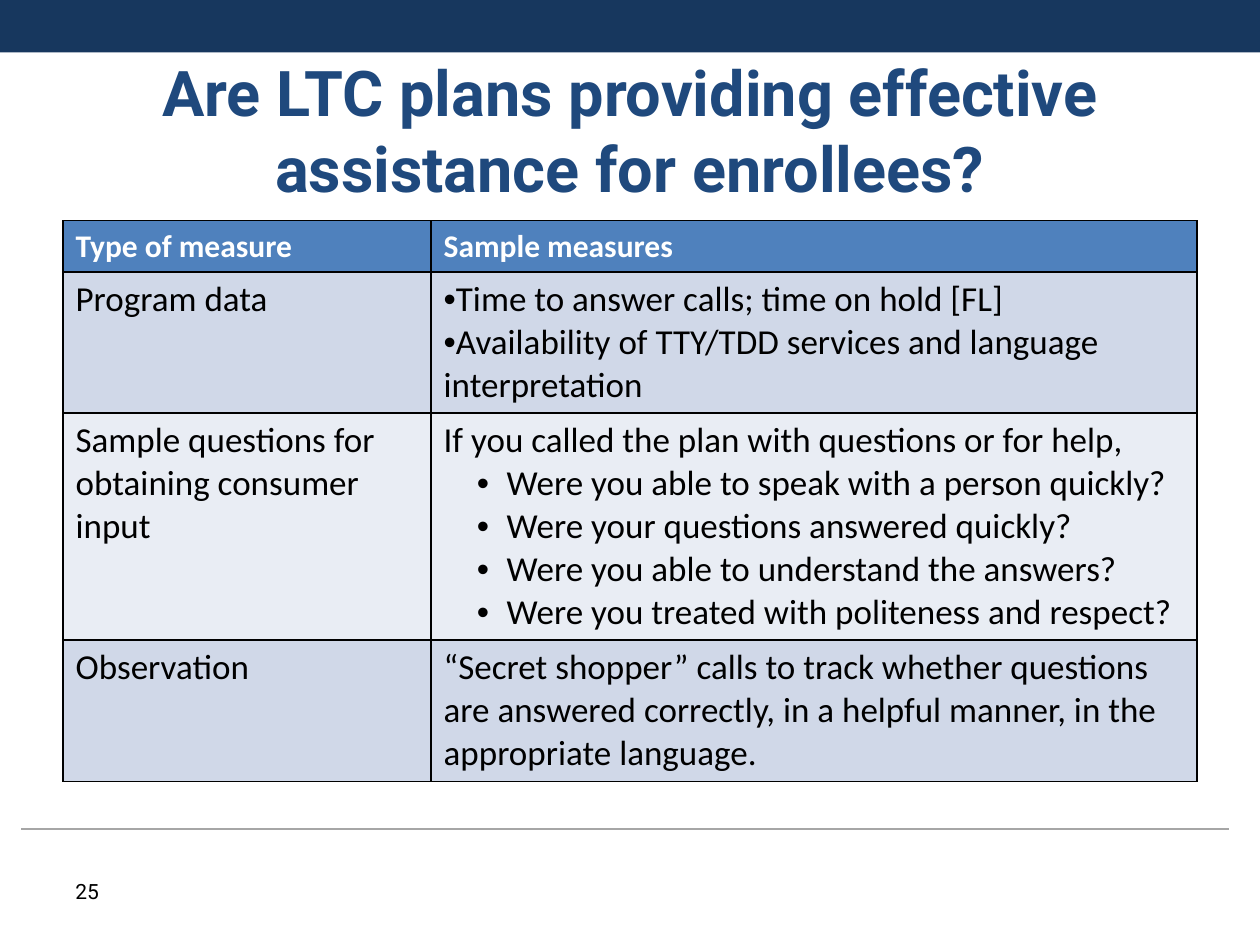
from lxml import etree
from pptx import Presentation
from pptx.dml.color import RGBColor
from pptx.enum.shapes import MSO_CONNECTOR, MSO_SHAPE
from pptx.enum.text import MSO_ANCHOR, MSO_AUTO_SIZE, PP_ALIGN
from pptx.oxml.ns import qn
from pptx.util import Cm, Pt

RECTANGLE = MSO_SHAPE.RECTANGLE
STRAIGHT = MSO_CONNECTOR.STRAIGHT
MIDDLE = MSO_ANCHOR.MIDDLE
CENTER = PP_ALIGN.CENTER
NO_FIT = MSO_AUTO_SIZE.NONE

# Content: each cell is a list of (style, text)
TITLE = "Are LTC plans providing effective assistance for enrollees?"
PAGE_NUMBER = "25"
ROWS = [
    ([("plain", "Type of measure")], [("plain", "Sample measures")]),
    ([("plain", "Program data")],
     [("bullet", "Time to answer calls; time on hold [FL]"),
      ("bullet", "Availability of TTY/TDD services and language interpretation")]),
    ([("plain", "Sample questions for obtaining consumer input")],
     [("plain", "If you called the plan with questions or for help,"),
      ("nested", "Were you able to speak with a person quickly?"),
      ("nested", "Were your questions answered quickly?"),
      ("nested", "Were you able to understand the answers?"),
      ("nested", "Were you treated with politeness and respect?")]),
    ([("plain", "Observation")],
     [("plain", "“Secret shopper” calls to track whether questions are answered "
                "correctly, in a helpful manner, in the appropriate language.")]),
]

THEME = {
    "heading_font": "Roboto", "table_font": "Calibri",
    "title_size": 36, "header_size": 18, "body_size": 20, "number_size": 12,
    "bar": "17375E", "rule": "A6A6A6", "title": "1F497D", "text": "000000",
    "border": "000000", "header": "4F81BD", "header_text": "FFFFFF",
    "bands": ("D0D8E8", "E9EDF4"),
}

# Layout
MARGIN = Cm(1.27)
CONTENT_WIDTH = Cm(22.86)
COLUMN_WIDTHS = (Cm(7.42), Cm(15.44))
ROW_HEIGHTS = (Cm(1.03), Cm(2.84), Cm(4.57), Cm(2.84))
INDENTS = {"bullet": (0, 0), "nested": (Cm(1.27), Cm(-0.6))}


def color(name):
    return RGBColor.from_string(name)


def style_runs(para, font, size, text_color, bold=False):
    for span in para.runs:
        span.font.name = font
        span.font.size = Pt(size)
        span.font.bold = bold
        span.font.color.rgb = color(text_color)


def add_bullet(para, style):
    left, first_line = INDENTS[style]
    properties = para._p.get_or_add_pPr()
    properties.set("marL", str(int(left)))
    properties.set("indent", str(int(first_line)))
    etree.SubElement(properties, qn("a:buFont"), typeface="Arial")
    etree.SubElement(properties, qn("a:buChar"), char="•")


def add_borders(cell):
    properties = cell._tc.get_or_add_tcPr()
    for position, side in enumerate(("lnL", "lnR", "lnT", "lnB")):
        line = etree.Element(qn(f"a:{side}"), w=str(Pt(1)))
        fill = etree.SubElement(line, qn("a:solidFill"))
        etree.SubElement(fill, qn("a:srgbClr"), val=THEME["border"])
        properties.insert(position, line)


def fill_cell(cell, lines, row_number):
    is_header = row_number == 0
    bands = THEME["bands"]
    fill = THEME["header"] if is_header else bands[(row_number - 1) % len(bands)]
    cell.fill.solid()
    cell.fill.fore_color.rgb = color(fill)
    add_borders(cell)
    cell.text_frame.text = "\n".join(text for _, text in lines)
    for para, (style, _) in zip(cell.text_frame.paragraphs, lines):
        if style == "nested":
            para.level = 1
        if style in INDENTS:
            add_bullet(para, style)
        style_runs(para, THEME["table_font"],
                   THEME["header_size" if is_header else "body_size"],
                   THEME["header_text" if is_header else "text"], is_header)


def add_frame(page):
    # Top bar
    bar = page.shapes.add_shape(RECTANGLE, 0, 0, Cm(25.4), Cm(1.06))
    bar.shadow.inherit = False
    bar.fill.solid()
    bar.fill.fore_color.rgb = color(THEME["bar"])
    bar.line.fill.background()
    # Footer rule
    rule = page.shapes.add_connector(STRAIGHT, Cm(0.43), Cm(16.71), Cm(24.77), Cm(16.71))
    rule.line.color.rgb = color(THEME["rule"])
    rule.line.width = Pt(0.75)
    etree.SubElement(rule._element.spPr, qn("a:effectLst"))


def add_title(page):
    title = page.shapes.title
    title.left, title.top, title.width, title.height = MARGIN, Cm(1.27), CONTENT_WIDTH, Cm(2.67)
    frame = title.text_frame
    frame.text = TITLE
    frame.word_wrap = True
    frame.auto_size = NO_FIT
    frame.vertical_anchor = MIDDLE
    para = frame.paragraphs[0]
    para.alignment = CENTER
    style_runs(para, THEME["heading_font"], THEME["title_size"], THEME["title"], True)


def add_measures(page):
    table = page.shapes.add_table(len(ROWS), len(COLUMN_WIDTHS), MARGIN, Cm(4.45),
                                  CONTENT_WIDTH, sum(ROW_HEIGHTS)).table
    for column, width in zip(table.columns, COLUMN_WIDTHS):
        column.width = width
    for row_number, (row, height, cells) in enumerate(zip(table.rows, ROW_HEIGHTS, ROWS)):
        row.height = height
        for cell, lines in zip(row.cells, cells):
            fill_cell(cell, lines, row_number)


def add_page_number(page):
    box = page.shapes.add_textbox(MARGIN, Cm(17.58), Cm(3.18), Cm(1.02))
    box.text_frame.word_wrap = True
    box.text_frame.text = PAGE_NUMBER
    style_runs(box.text_frame.paragraphs[0], THEME["heading_font"],
               THEME["number_size"], THEME["text"])


def main():
    deck = Presentation()
    deck.slide_width, deck.slide_height = Cm(25.4), Cm(19.05)
    page = deck.slides.add_slide(deck.slide_layouts.get_by_name("Title Only"))
    add_frame(page)
    add_title(page)
    add_measures(page)
    add_page_number(page)
    deck.save("out.pptx")


if __name__ == "__main__":
    main()
